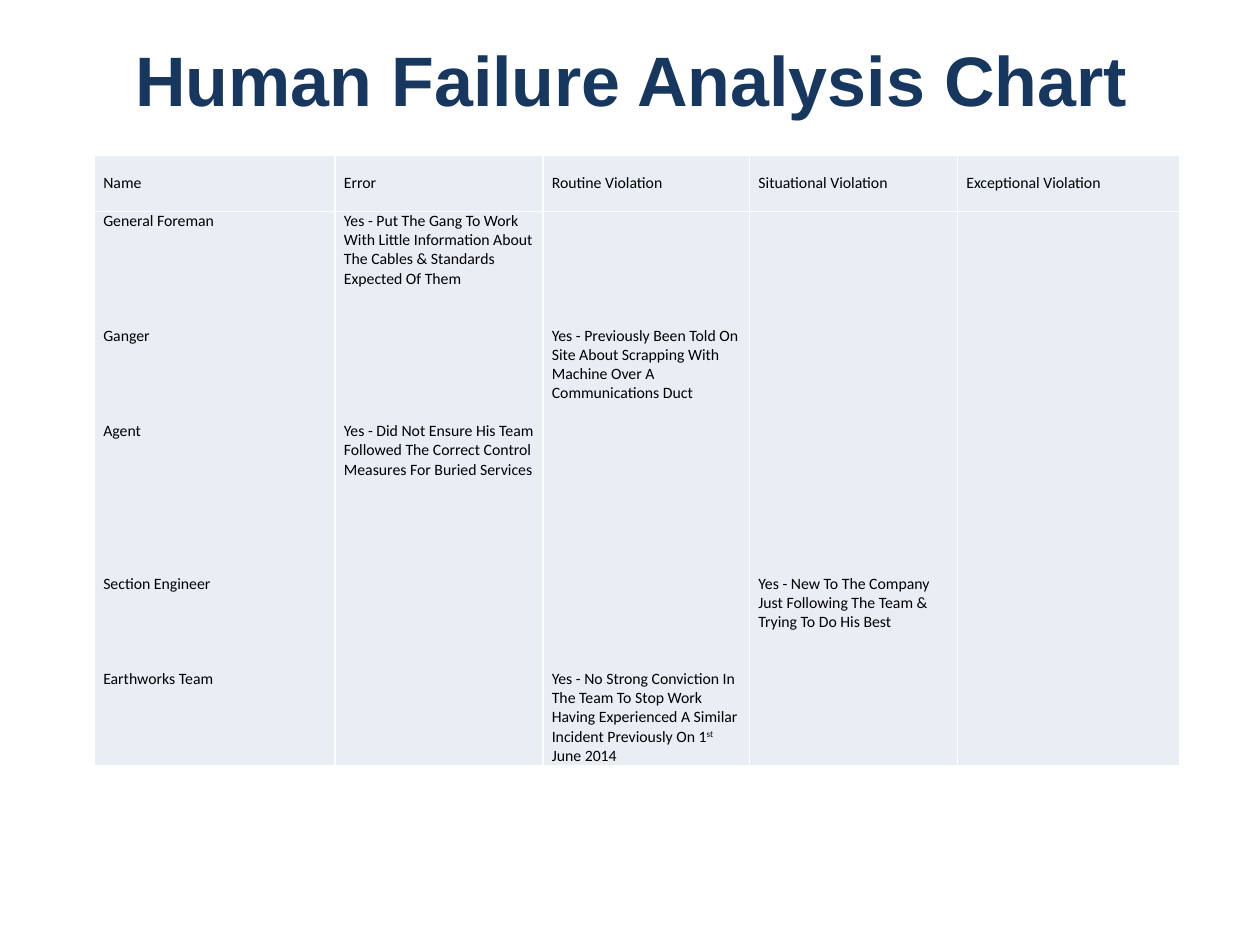
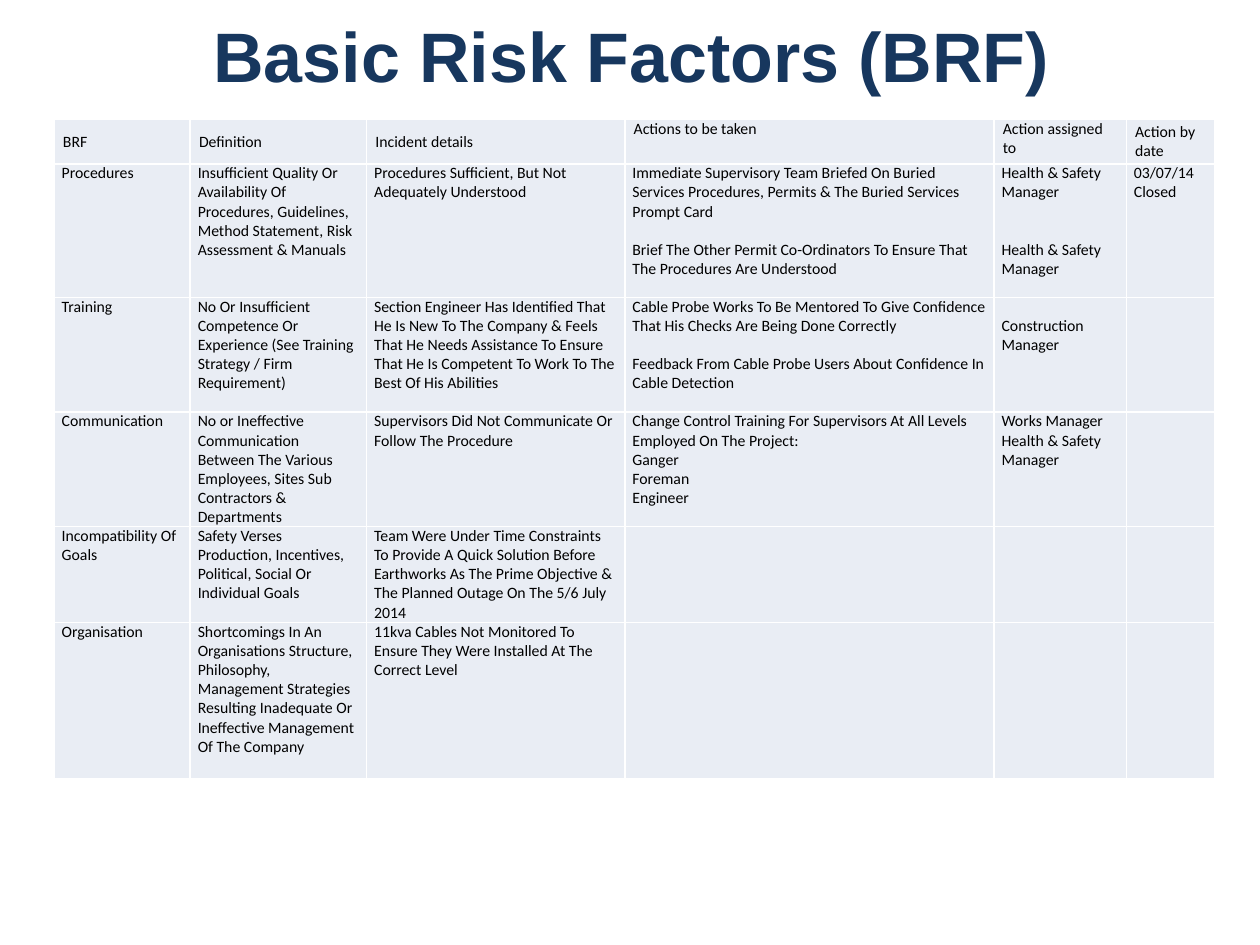
from dataclasses import dataclass

from lxml import etree
from pptx import Presentation
from pptx import util as u
from pptx.dml.color import RGBColor
from pptx.enum import text
from pptx.oxml import ns


# Shared look
@dataclass(frozen=True)
class Theme:
    navy: str = "17375E"
    black: str = "000000"
    cell_fill: str = "E9EDF4"
    grid: str = "FFFFFF"
    grid_width: float = 1
    title_font: str = "Arial"
    title_size: float = 40
    body_font: str = "Calibri"
    body_size: float = 9
    line_height: float = 10.9


THEME = Theme()
TITLE_FORMAT = {"name": THEME.title_font, "size": u.Pt(THEME.title_size), "bold": True}
BODY_FORMAT = {"name": THEME.body_font, "size": u.Pt(THEME.body_size)}
TOP, MIDDLE = text.MSO_ANCHOR.TOP, text.MSO_ANCHOR.MIDDLE

# Failure chart: a paragraph is text, or (lines of gap above, text); ^ marks superscript
FAILURE_COLUMNS = [1.91, 1.65, 1.64, 1.65, 1.76]
FAILURE_HEADS = ["Name", "Error", "Routine Violation", "Situational Violation",
                 "Exceptional Violation"]
FAILURES = [
    ["General Foreman", (5, "Ganger"), (4, "Agent"), (7, "Section Engineer"),
     (4, "Earthworks Team")],
    ["Yes - Put The Gang To Work With Little Information About The Cables & "
     "Standards Expected Of Them",
     (7, "Yes - Did Not Ensure His Team Followed The Correct Control Measures "
         "For Buried Services")],
    [(6, "Yes - Previously Been Told On Site About Scrapping With Machine Over A "
         "Communications Duct"),
     (14, "Yes - No Strong Conviction In The Team To Stop Work Having Experienced "
          "A Similar Incident Previously On 1^st^ June 2014")],
    [(19, "Yes - New To The Company Just Following The Team & Trying To Do His Best")],
    [],
]

# Risk factors
RISK_COLUMNS = [1.08, 1.4, 2.05, 2.93, 1.05, 0.7]
RISK_HEADS = ["BRF", "Definition", "Incident details", "Actions to be taken",
              "Action assigned to", "Action by date"]
RISK_HEAD_ANCHORS = [MIDDLE, MIDDLE, MIDDLE, TOP, TOP, MIDDLE]
RISK_HEIGHTS = [1.06, 0.91, 0.91, 0.76, 1.24]
RISKS = [
    [["Procedures"],
     ["Insufficient Quality Or Availability Of Procedures, Guidelines, Method "
      "Statement, Risk Assessment & Manuals"],
     ["Procedures Sufficient, But Not Adequately Understood"],
     ["Immediate Supervisory Team Briefed On Buried Services Procedures, Permits & "
      "The Buried Services Prompt Card",
      (1, "Brief The Other Permit Co-Ordinators To Ensure That The Procedures Are "
          "Understood")],
     ["Health & Safety Manager", (2, "Health & Safety Manager")],
     ["03/07/14", "Closed"]],
    [["Training"],
     ["No Or Insufficient Competence Or Experience (See Training Strategy / Firm "
      "Requirement)"],
     ["Section Engineer Has Identified That He Is New To The Company & Feels That He "
      "Needs Assistance To Ensure That He Is Competent To Work To The Best Of His "
      "Abilities"],
     ["Cable Probe Works To Be Mentored To Give Confidence That His Checks Are Being "
      "Done Correctly",
      (1, "Feedback From Cable Probe Users About Confidence In Cable Detection")],
     [(1, "Construction Manager")],
     []],
    [["Communication"],
     ["No or Ineffective Communication Between The Various Employees, Sites Sub "
      "Contractors & Departments"],
     ["Supervisors Did Not Communicate Or Follow The Procedure"],
     ["Change Control Training For Supervisors At All Levels Employed On The Project:",
      "Ganger", "Foreman", "Engineer"],
     ["Works Manager", "Health & Safety Manager"],
     []],
    [["Incompatibility Of Goals"],
     ["Safety Verses Production, Incentives, Political, Social Or Individual Goals"],
     ["Team Were Under Time Constraints To Provide A Quick Solution Before Earthworks "
      "As The Prime Objective & The Planned Outage On The 5/6 July 2014"],
     [], [], []],
    [["Organisation"],
     ["Shortcomings In An Organisations Structure, Philosophy, Management Strategies "
      "Resulting Inadequate Or Ineffective Management Of The Company"],
     ["11kva Cables Not Monitored To Ensure They Were Installed At The Correct Level"],
     [], [], []],
]


def add_run(p, words, formats, color):
    r = p.add_run()
    r.text = words
    for name, value in formats.items():
        setattr(r.font, name, value)
    r.font.color.rgb = RGBColor.from_string(color)
    return r


def add_title(s, words, top):
    sp = s.shapes.add_textbox(u.Inches(0.51), u.Inches(top), u.Inches(9), u.Inches(1.25))
    tf = sp.text_frame
    tf.word_wrap = True
    tf.vertical_anchor = MIDDLE
    p = tf.paragraphs[0]
    p.alignment = text.PP_ALIGN.CENTER
    add_run(p, words, TITLE_FORMAT, THEME.navy)


def style_cell(cell, side_margin, anchor):
    formats = {"margin_left": u.Inches(side_margin), "margin_right": u.Inches(side_margin),
               "margin_top": 0, "margin_bottom": 0, "vertical_anchor": anchor}
    for name, value in formats.items():
        setattr(cell, name, value)
    # Borders come before the fill in the cell properties
    tc_pr = cell._tc.get_or_add_tcPr()
    for side in ("lnL", "lnR", "lnT", "lnB"):
        ln = etree.SubElement(tc_pr, ns.qn(f"a:{side}"), w=str(u.Pt(THEME.grid_width)))
        fill = etree.SubElement(ln, ns.qn("a:solidFill"))
        etree.SubElement(fill, ns.qn("a:srgbClr"), val=THEME.grid)
    cell.fill.solid()
    cell.fill.fore_color.rgb = RGBColor.from_string(THEME.cell_fill)


def write_cell(cell, paragraphs):
    tf = cell.text_frame
    for i, item in enumerate(paragraphs):
        gap, words = (0, item) if isinstance(item, str) else item
        space = u.Pt(gap * THEME.line_height)
        p = tf.add_paragraph() if i else tf.paragraphs[0]
        if i:
            p.space_before = space
        else:
            cell.margin_top = space
        for j, part in enumerate(words.split("^")):
            r = add_run(p, part, BODY_FORMAT, THEME.black)
            if j % 2:
                r._r.get_or_add_rPr().set("baseline", "30000")


def add_grid(s, left, top, widths, heights, rows, side_margin=0.07, anchors=None):
    """Draw a table; anchors gives one list of cell anchors per row."""
    frame = s.shapes.add_table(len(rows), len(widths), u.Inches(left), u.Inches(top),
                               u.Inches(sum(widths)), u.Inches(sum(heights)))
    table = frame.table
    table.first_row = table.horz_banding = False
    for column, width in zip(table.columns, widths):
        column.width = u.Inches(width)
    for i, (height, row) in enumerate(zip(heights, rows)):
        table.rows[i].height = u.Inches(height)
        for j, paragraphs in enumerate(row):
            cell = table.cell(i, j)
            style_cell(cell, side_margin, anchors[i][j] if anchors else TOP)
            write_cell(cell, paragraphs)


def heading_row(heads):
    return [[head] for head in heads]


def main():
    prs = Presentation()
    prs.slide_width, prs.slide_height = u.Inches(10), u.Inches(7.5)
    blank = prs.slide_layouts[6]

    # Human failure analysis
    s = prs.slides.add_slide(blank)
    add_title(s, "Human Failure Analysis Chart", 0)
    count = len(FAILURE_COLUMNS)
    add_grid(s, 0.75, 1.23, FAILURE_COLUMNS, [0.45, 4.4],
             [heading_row(FAILURE_HEADS), FAILURES],
             anchors=[[MIDDLE] * count, [TOP] * count])

    # Basic risk factors: body and heading tables
    s = prs.slides.add_slide(blank)
    add_title(s, "Basic Risk Factors (BRF)", -0.19)
    add_grid(s, 0.43, 1.3, RISK_COLUMNS, RISK_HEIGHTS, RISKS, side_margin=0.06)
    add_grid(s, 0.43, 0.95, RISK_COLUMNS, [0.35], [heading_row(RISK_HEADS)],
             anchors=[RISK_HEAD_ANCHORS])

    prs.save("out.pptx")


if __name__ == "__main__":
    main()
